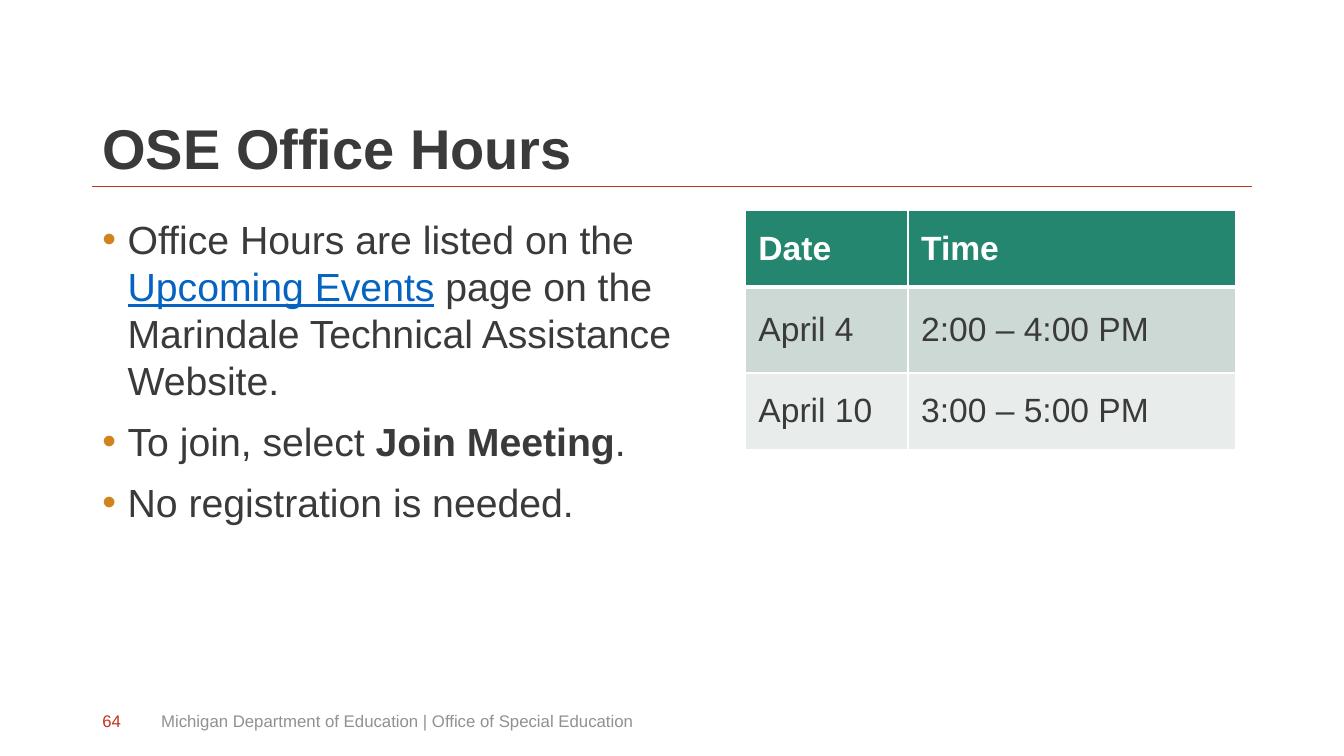
from lxml import etree
from pptx import Presentation
from pptx import util as u
from pptx.dml.color import RGBColor
from pptx.enum import shapes, text
from pptx.oxml import ns

COLORS = {
    "ink": "3A3A3A", "red": "C3321B", "gray": "919191", "link": "0563C1",
    "bullet": "D1831E", "white": "FFFFFF", "header": "24866E",
    "band_dark": "CDD9D5", "band_light": "E8EDEB",
}
LEFT = 66
FOOTER_TOP, FOOTER_HEIGHT = 500.4, 28.8


def add_text(para, words, size=28, color="ink", bold=False, underline=False):
    span = para.add_run()
    span.text = words
    font = span.font
    font.name, font.size = "Arial", u.Pt(size)
    font.bold, font.underline = bold, underline
    font.color.rgb = RGBColor.from_string(COLORS[color])


def add_colored(parent, tag, color):
    """Append a DrawingML element holding one RGB colour."""
    holder = etree.SubElement(parent, ns.qn(tag))
    etree.SubElement(holder, ns.qn("a:srgbClr"), val=COLORS[color])


deck = Presentation()
deck.slide_width, deck.slide_height = u.Pt(960), u.Pt(540)
page = deck.slides.add_slide(deck.slide_layouts[1])

# Title and rule
rule = page.shapes.add_connector(
    shapes.MSO_CONNECTOR.STRAIGHT, u.Pt(LEFT), u.Pt(133.2), u.Pt(894), u.Pt(133.2))
rule.line.color.rgb = RGBColor.from_string(COLORS["red"])
rule.line.width = u.Pt(0.5)
etree.SubElement(rule._element.spPr, ns.qn("a:effectLst"))

title = page.shapes.title
title.left, title.top, title.width, title.height = map(u.Pt, (LEFT, 28.8, 828, 104.4))
title.text_frame.vertical_anchor = text.MSO_ANCHOR.BOTTOM
title.text_frame.auto_size = text.MSO_AUTO_SIZE.NONE
para = title.text_frame.paragraphs[0]
para.alignment = text.PP_ALIGN.LEFT
para.line_spacing = 0.9
add_text(para, "OSE Office Hours", size=40, bold=True)

# Bulleted list
bullets = [
    [("Office Hours are listed on the ", {}),
     ("Upcoming Events", {"color": "link", "underline": True}),
     (" page on the Marindale Technical Assistance Website.", {})],
    [("To join, select ", {}), ("Join Meeting", {"bold": True}), (".", {})],
    [("No registration is needed.", {})],
]
body = page.placeholders[1]
body.left, body.top, body.width, body.height = map(u.Pt, (LEFT, 150, 495.36, 350.4))
frame = body.text_frame
frame.auto_size = text.MSO_AUTO_SIZE.NONE
for index, spans in enumerate(bullets):
    para = frame.add_paragraph() if index else frame.paragraphs[0]
    para.space_before = u.Pt(10 if index else 0)
    para.line_spacing = 1.0
    props = para._p.get_or_add_pPr()
    props.set("marL", str(u.Pt(18)))
    props.set("indent", str(-u.Pt(18)))
    add_colored(props, "a:buClr", "bullet")
    etree.SubElement(props, ns.qn("a:buFont"), typeface="Arial")
    etree.SubElement(props, ns.qn("a:buChar"), char="•")
    for words, style in spans:
        add_text(para, words, **style)

# Schedule
schedule = [("Date", "Time"), ("April 4", "2:00 – 4:00 PM"), ("April 10", "3:00 – 5:00 PM")]
row_fills = ["header", "band_dark", "band_light"]
row_heights = [54.7, 61.5, 54.7]
column_widths = [116.2, 234.2]
table = page.shapes.add_table(
    3, 2, u.Pt(532.4), u.Pt(150.2), u.Pt(sum(column_widths)), u.Pt(sum(row_heights))).table
for column, width in zip(table.columns, column_widths):
    column.width = u.Pt(width)
for row_index, entries in enumerate(schedule):
    is_header = row_index == 0
    table.rows[row_index].height = u.Pt(row_heights[row_index])
    for column_index, words in enumerate(entries):
        cell = table.cell(row_index, column_index)
        cell.vertical_anchor = text.MSO_ANCHOR.MIDDLE
        cell.margin_left = cell.margin_right = u.Pt(9.36)
        cell.margin_top = cell.margin_bottom = u.Pt(3.6)
        add_text(cell.text_frame.paragraphs[0], words, size=24,
                 color="white" if is_header else "ink", bold=is_header)
        props = cell._tc.get_or_add_tcPr()
        for side in "LRTB":
            thick = (row_index, side) in [(0, "B"), (1, "T")]
            border = etree.SubElement(props, ns.qn(f"a:ln{side}"), w=str(u.Pt(3 if thick else 1)))
            add_colored(border, "a:solidFill", "white")
        cell.fill.solid()
        cell.fill.fore_color.rgb = RGBColor.from_string(COLORS[row_fills[row_index]])

# Footer
footers = [
    ("64", LEFT, 32.4, "red"),
    ("Michigan Department of Education | Office of Special Education", 108, 604, "gray"),
]
for words, left, width, color in footers:
    box = page.shapes.add_textbox(u.Pt(left), u.Pt(FOOTER_TOP), u.Pt(width), u.Pt(FOOTER_HEIGHT))
    box.text_frame.word_wrap = True
    box.text_frame.vertical_anchor = text.MSO_ANCHOR.MIDDLE
    add_text(box.text_frame.paragraphs[0], words, size=12, color=color)

deck.save("out.pptx")
